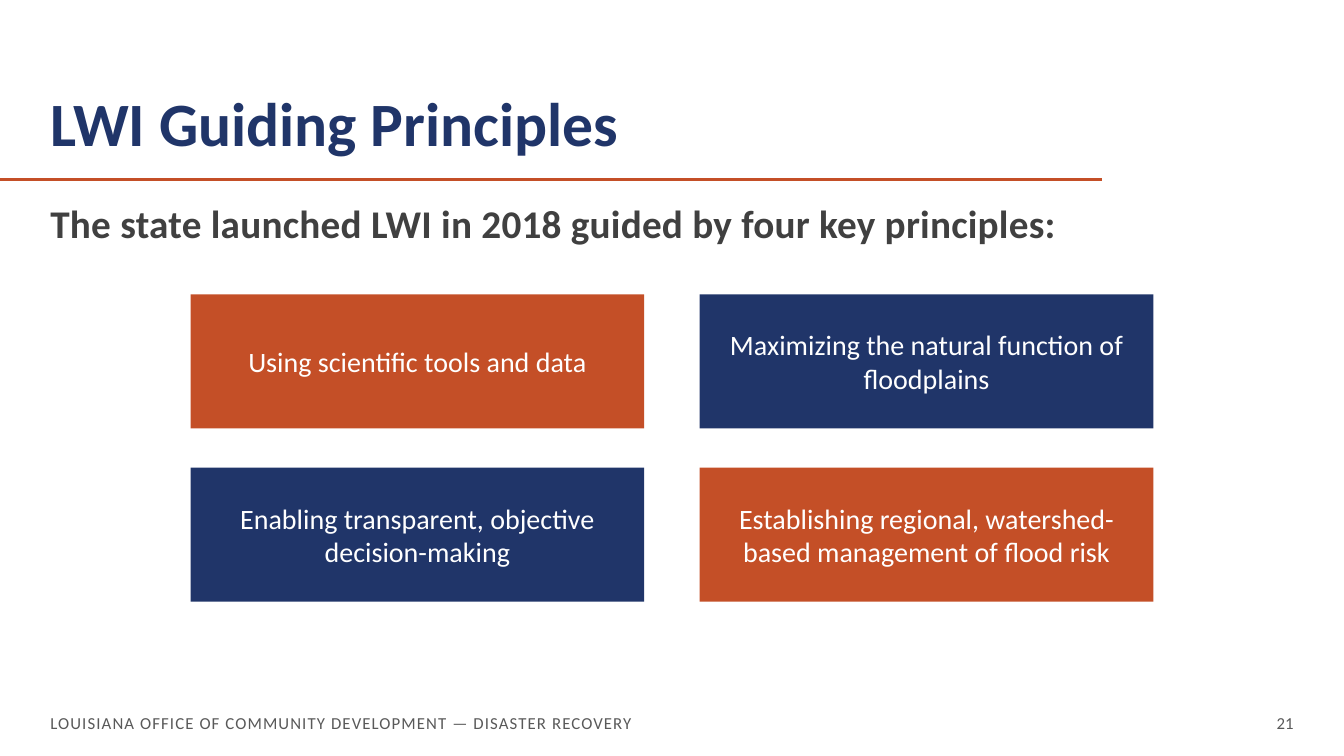
from dataclasses import dataclass

import pptx
import pptx.dml.color
import pptx.enum.shapes
import pptx.enum.text
import pptx.oxml.ns
import pptx.util
from lxml import etree

EMU_PER_PX = 9144  # 100 px to the inch

Align = pptx.enum.text.PP_ALIGN
Anchor = pptx.enum.text.MSO_ANCHOR


@dataclass(frozen=True)
class Theme:
    font: str = "Calibri"
    navy: str = "203569"
    rust: str = "C44F27"
    white: str = "FFFFFF"
    dark_gray: str = "404040"
    gray: str = "595959"
    title_size: int = 44
    lead_size: int = 28
    card_size: int = 20
    footer_size: int = 12
    rule_width: float = 2.25


@dataclass(frozen=True)
class Box:
    left: int
    top: int
    width: int
    height: int


@dataclass(frozen=True)
class TextStyle:
    size: int
    color: str
    bold: bool = False
    align: Align = Align.LEFT
    anchor: Anchor = Anchor.MIDDLE
    line_spacing: float = 1.0
    tracking: int = 0  # hundredths of a point


@dataclass(frozen=True)
class Principle:
    text: str
    fill: str


THEME = Theme()
TITLE_STYLE = TextStyle(THEME.title_size, THEME.navy, bold=True,
                        anchor=Anchor.BOTTOM, line_spacing=0.9)
LEAD_STYLE = TextStyle(THEME.lead_size, THEME.dark_gray, bold=True,
                       anchor=Anchor.TOP, line_spacing=0.9, tracking=20)
CARD_STYLE = TextStyle(THEME.card_size, THEME.white, align=Align.CENTER)
FOOTER_STYLE = TextStyle(THEME.footer_size, THEME.gray, tracking=80)
NUMBER_STYLE = TextStyle(THEME.footer_size, THEME.gray, align=Align.RIGHT)

PRINCIPLES = [
    Principle("Using scientific tools and data", THEME.rust),
    Principle("Maximizing the natural function of floodplains", THEME.navy),
    Principle("Enabling transparent, objective\vdecision-making", THEME.navy),
    Principle("Establishing regional, watershed-based management of flood risk", THEME.rust),
]
COLUMNS = 2
FIRST_CARD = Box(189, 292, 450, 133)
COLUMN_PITCH, ROW_PITCH = 505, 172


def px(value: int) -> pptx.util.Emu:
    return pptx.util.Emu(value * EMU_PER_PX)


def rgb(color: str) -> pptx.dml.color.RGBColor:
    return pptx.dml.color.RGBColor.from_string(color)


def place(shape, box: Box) -> None:
    shape.left, shape.top = px(box.left), px(box.top)
    shape.width, shape.height = px(box.width), px(box.height)


def write(shape, text: str, style: TextStyle) -> None:
    text_frame = shape.text_frame
    text_frame.text = text
    text_frame.word_wrap = True
    text_frame.auto_size = pptx.enum.text.MSO_AUTO_SIZE.NONE
    text_frame.vertical_anchor = style.anchor
    paragraph = text_frame.paragraphs[0]
    paragraph.alignment = style.align
    paragraph.line_spacing = style.line_spacing
    for run in paragraph.runs:
        run.font.name = THEME.font
        run.font.size = pptx.util.Pt(style.size)
        run.font.bold = style.bold
        run.font.color.rgb = rgb(style.color)
        if style.tracking:
            run._r.get_or_add_rPr().set("spc", str(style.tracking))


def clear_margins(shape) -> None:
    text_frame = shape.text_frame
    text_frame.margin_left = text_frame.margin_right = 0
    text_frame.margin_top = text_frame.margin_bottom = 0


def add_title(slide, text: str, box: Box) -> None:
    title = slide.shapes.title
    place(title, box)
    clear_margins(title)
    write(title, text, TITLE_STYLE)


def add_text(slide, text: str, box: Box, style: TextStyle) -> None:
    shape = slide.shapes.add_textbox(0, 0, 0, 0)
    place(shape, box)
    clear_margins(shape)
    write(shape, text, style)


def add_rule(slide, top: int, width: int) -> None:
    rule = slide.shapes.add_connector(
        pptx.enum.shapes.MSO_CONNECTOR.STRAIGHT, 0, px(top), px(width), px(top))
    rule.line.color.rgb = rgb(THEME.rust)
    rule.line.width = pptx.util.Pt(THEME.rule_width)
    etree.SubElement(rule._element.spPr, pptx.oxml.ns.qn("a:effectLst"))


def add_card(slide, principle: Principle, box: Box) -> None:
    card = slide.shapes.add_shape(pptx.enum.shapes.MSO_SHAPE.RECTANGLE, 0, 0, 0, 0)
    place(card, box)
    card.shadow.inherit = False
    card.fill.solid()
    card.fill.fore_color.rgb = rgb(principle.fill)
    card.line.fill.background()
    write(card, principle.text, CARD_STYLE)


def main() -> None:
    presentation = pptx.Presentation()
    presentation.slide_width, presentation.slide_height = px(1333), px(750)
    title_only = presentation.slide_layouts.get_by_name("Title Only")
    slide = presentation.slides.add_slide(title_only)

    # Heading
    add_rule(slide, top=178, width=1093)
    add_title(slide, "LWI Guiding Principles", Box(50, 44, 1043, 115))
    add_text(slide, "The state launched LWI in 2018 guided by four key principles:",
             Box(50, 203, 1043, 44), LEAD_STYLE)

    # Grid of principles
    for index, principle in enumerate(PRINCIPLES):
        row, column = divmod(index, COLUMNS)
        add_card(slide, principle, Box(FIRST_CARD.left + column * COLUMN_PITCH,
                                       FIRST_CARD.top + row * ROW_PITCH,
                                       FIRST_CARD.width, FIRST_CARD.height))

    # Footer
    add_text(slide, "LOUISIANA OFFICE OF COMMUNITY DEVELOPMENT — DISASTER RECOVERY",
             Box(50, 700, 667, 35), FOOTER_STYLE)
    add_text(slide, "21", Box(983, 700, 300, 35), NUMBER_STYLE)

    presentation.save("out.pptx")


if __name__ == "__main__":
    main()
